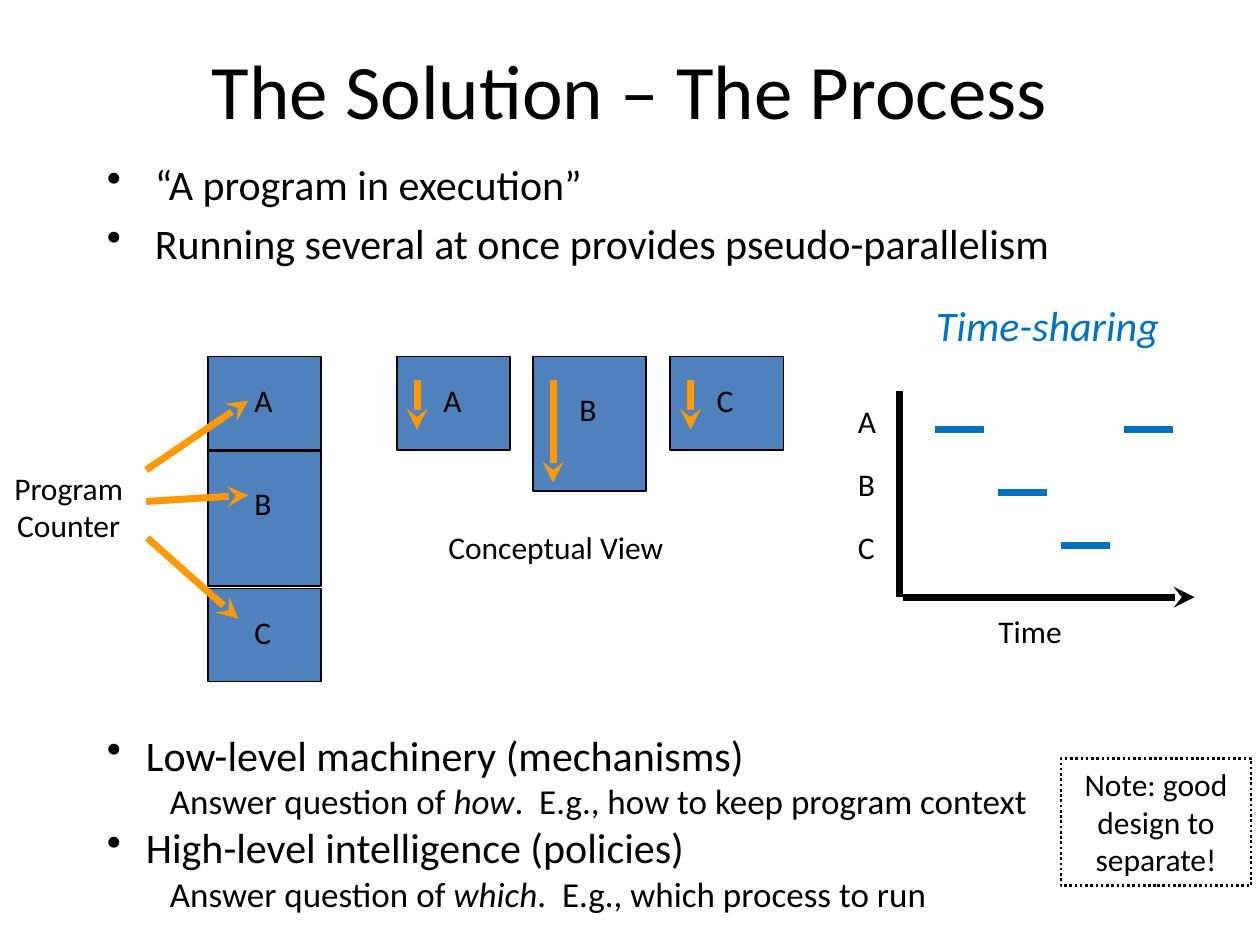
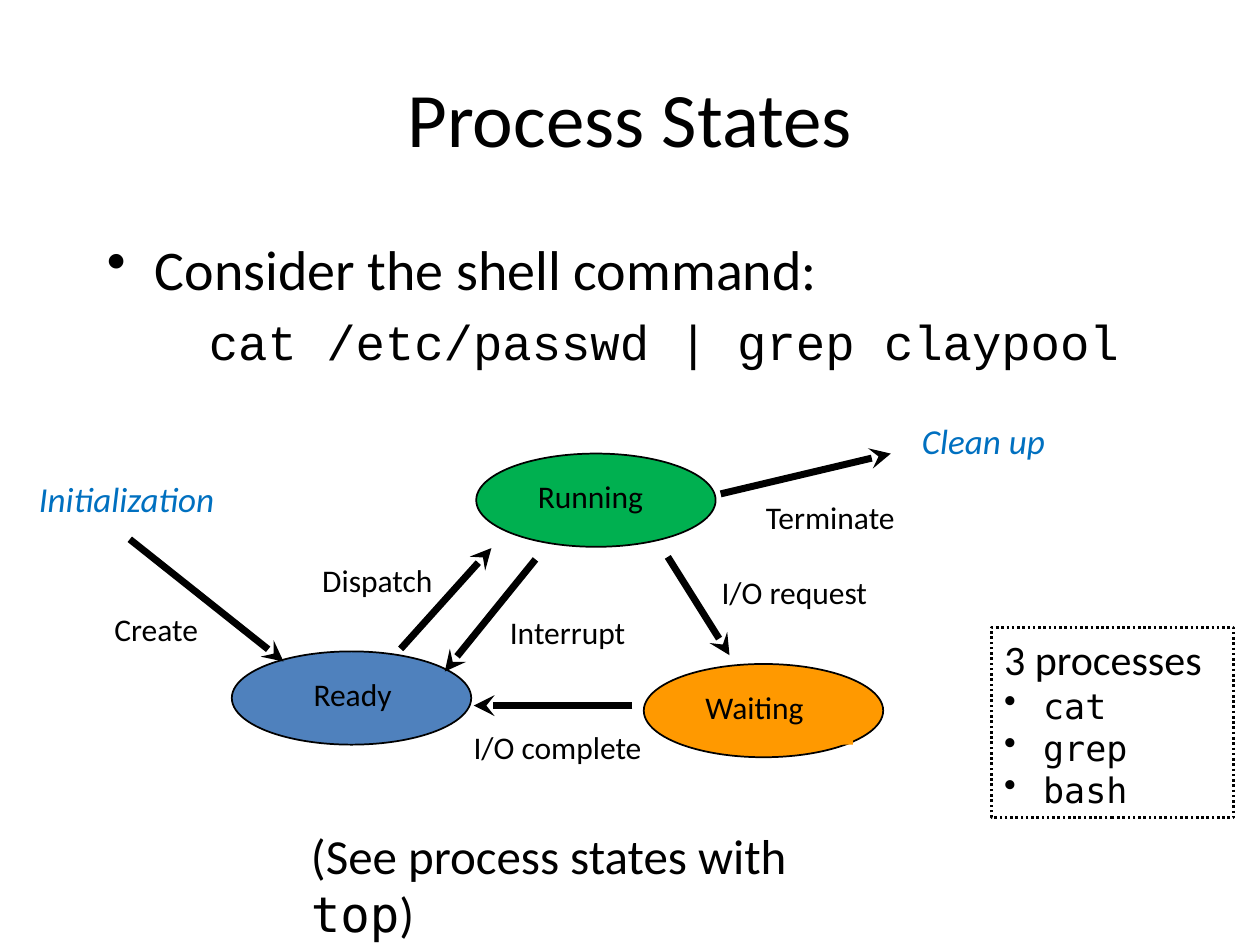
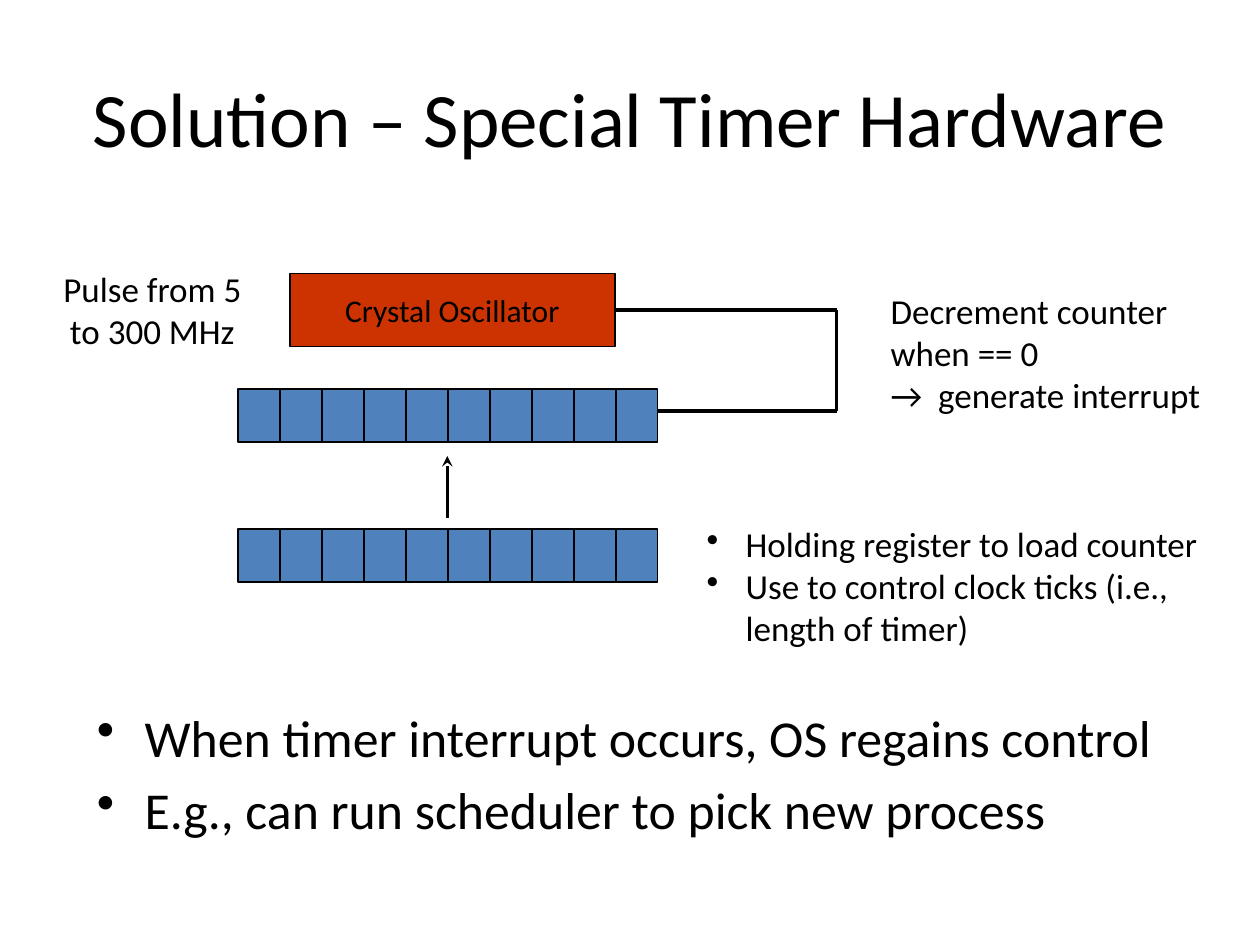
from lxml.etree import SubElement
from pptx import Presentation
from pptx.dml.color import RGBColor
from pptx.enum.dml import MSO_LINE as DASH
from pptx.enum.shapes import MSO_CONNECTOR as LINK, MSO_SHAPE as FORM
from pptx.enum.text import MSO_ANCHOR as ANCHOR, PP_ALIGN as ALIGN
from pptx.oxml.ns import qn
from pptx.util import Inches, Pt

color = RGBColor.from_string
BLACK, BLUE, ACCENT = "000000", "4F81BD", "0070C0"
ORANGE, GREEN, RED = "FF9900", "00B050", "CC3300"
BODY_FONT, SHELL_FONT, CODE_FONT = "Calibri", "Courier New", "DejaVu Sans Mono"

deck = Presentation()
deck.slide_width, deck.slide_height = Inches(10), Inches(7.5)
grid = deck.slide_width / 10


def block(slide, at, lines=(), form=None, fill=None, edge=0, dash=None,
          anchor=ANCHOR.TOP, **style):
    place = [round(length * grid) for length in at]
    if form is None:
        item = slide.shapes.add_textbox(*place)
    else:
        item = slide.shapes.add_shape(form, *place)
        item.shadow.inherit = False
    if fill:
        item.fill.solid()
        item.fill.fore_color.rgb = color(fill)
    else:
        item.fill.background()
    if edge:
        item.line.color.rgb = color(BLACK)
        item.line.width = Pt(edge)
        item.line.dash_style = dash
    else:
        item.line.fill.background()
    frame = item.text_frame
    frame.word_wrap, frame.vertical_anchor = True, anchor
    for number, line in enumerate(lines):
        runs, own = (line, {}) if isinstance(line, str) else line
        look = {"size": 18, "name": BODY_FONT, "ink": BLACK, "align": ALIGN.LEFT,
                "italic": False, "before": 0, "left": 0, "hang": 0} | style | own
        paragraph = frame.add_paragraph() if number else frame.paragraphs[0]
        layout = {"alignment": look["align"],
                  "space_before": Pt(look["before"] * look["size"])}
        for key, value in layout.items():
            setattr(paragraph, key, value)
        properties = paragraph._p.get_or_add_pPr()
        properties.set("marL", str(Inches(look["left"] + look["hang"])))
        properties.set("indent", str(-Inches(look["hang"])))
        if look["hang"]:
            SubElement(properties, qn("a:buChar")).set("char", "•")
        for words, change in [(runs, {})] if isinstance(runs, str) else runs:
            face = look | change
            run = paragraph.add_run()
            run.text = words
            values = {"size": Pt(face["size"]), "name": face["name"],
                      "italic": face["italic"]}
            for key, value in values.items():
                setattr(run.font, key, value)
            run.font.color.rgb = color(face["ink"])


def stroke(slide, start, end, ink=BLACK, width=4, arrow=True):
    ends = [round(length * grid) for length in (*start, *end)]
    link = slide.shapes.add_connector(LINK.STRAIGHT, *ends)
    link.line.color.rgb = color(ink)
    link.line.width = Pt(width)
    if arrow:
        SubElement(link.line._get_or_add_ln(), qn("a:tailEnd")).set("type", "stealth")
    SubElement(link._element.spPr, qn("a:effectLst"))


process, states, timer = pages = [
    deck.slides.add_slide(deck.slide_layouts[6]) for _ in range(3)]
headings = [("The Solution – The Process", 0.08), ("Process States", 0.3),
            ("Solution – Special Timer Hardware", 0.3)]
for page, (heading, top) in zip(pages, headings):
    block(page, (0.5, top, 9, 1.25), [heading], size=44, align=ALIGN.CENTER,
          anchor=ANCHOR.MIDDLE)

outline = {"hang": 0.38, "before": 0.2}
small_bullet = {"hang": 0.31}
centred = {"align": ALIGN.CENTER}
aside = {"ink": ACCENT, "italic": True}
note = {"form": FORM.RECTANGLE, "edge": 1.5, "dash": DASH.ROUND_DOT}

block(process, (0.75, 1.21, 8.75, 1.22),
      ["“A program in execution”",
       "Running several at once provides pseudo-parallelism"], size=24, **outline)

SHORT, TALL = 0.74, 1.07
memory = [("A", 1.65, 2.83, SHORT), ("B", 1.65, 3.58, TALL), ("C", 1.65, 4.67, SHORT)]
concept = [("A", 3.15, 2.83, SHORT), ("B", 4.23, 2.83, TALL), ("C", 5.32, 2.83, SHORT)]
for name, left, top, height in memory + concept:
    block(process, (left, top, 0.9, height), form=FORM.RECTANGLE, fill=BLUE, edge=1)
    block(process, (left + 0.27, top + height / 5, 0.44, 0.5), [name])

counter_arrows = [((1.16, 3.73), (1.97, 3.18)), ((1.16, 3.98), (1.97, 3.93)),
                  ((1.17, 4.27), (1.89, 4.91))]
for start, end in counter_arrows:
    stroke(process, start, end, ORANGE)
for name, left, top, height in concept:
    stroke(process, (left + 0.16, top + 0.19),
           (left + 0.16, top + (1 if height == TALL else 0.58)), ORANGE)
block(process, (0, 3.67, 1.09, 0.71), ["Program", "Counter"], **centred)
block(process, (3.46, 4.14, 2.52, 0.5), ["Conceptual View"])

stroke(process, (7.14, 3.1), (7.14, 4.74), arrow=False)
stroke(process, (7.17, 4.74), (9.48, 4.74))
for row, name in enumerate("ABC"):
    block(process, (6.71, 3.14 + row / 2, 0.44, 0.5), [name])
for turn, level in enumerate([3.41, 3.91, 4.33, 3.41]):
    start = 7.42 + turn / 2
    stroke(process, (start, level), (start + 0.39, level), ACCENT, arrow=False)
block(process, (7.79, 4.81, 0.77, 0.4), ["Time"], **centred)
block(process, (7.33, 2.33, 1.99, 0.5), ["Time-sharing"], size=24, **aside)

answer = {"size": 20, "left": 0.5}
slanted = {"italic": True}
block(process, (0.75, 5.74, 8.49, 1.58), [
    ("Low-level machinery (mechanisms)", small_bullet),
    ([("Answer question of ", {}), ("how", slanted),
      (".  E.g., how to keep program context", {})], answer),
    ("High-level intelligence (policies)", small_bullet),
    ([("Answer question of ", {}), ("which", slanted),
      (".  E.g., which process to run", {})], answer)], size=24)
block(process, (8.42, 6.02, 1.51, 1.01), ["Note: good design to separate!"],
      **note, **centred)

block(states, (0.75, 1.81, 8.5, 1.35), [
    ("Consider the shell command:", outline),
    ("cat /etc/passwd | grep claypool",
     {"size": 28, "name": SHELL_FONT, "left": 0.81, "before": 0.2})], size=32)

ovals = [("Waiting", 5.11, 5.27, ORANGE, 0.39, 1.27, ORANGE),
         ("Ready", 1.84, 5.17, BLUE, 0.55, 1.05, None),
         ("Running", 3.78, 3.6, GREEN, 0.39, 1.35, None)]
for name, left, top, fill, shift, width, backing in ovals:
    block(states, (left, top, 1.9, 0.74), form=FORM.OVAL, fill=fill, edge=1)
    block(states, (left + shift, top + 0.14, width, 0.5), [name], fill=backing)

transitions = [
    ("Create", (0.8, 4.79, 0.88), (1.03, 4.28), (2.25, 5.25)),
    ("Dispatch", (2.45, 4.4, 1.09), (3.18, 5.15), (3.9, 4.35)),
    ("Interrupt", (3.94, 4.82, 1.13), (4.25, 4.44), (3.53, 5.33)),
    ("I/O request", (5.62, 4.5, 1.37), (5.3, 4.42), (5.79, 5.2)),
    ("I/O complete", (3.65, 5.73, 1.55), (5.02, 5.6), (3.76, 5.6)),
    ("Terminate", (5.97, 3.9, 1.24), (5.72, 3.92), (7.07, 3.6))]
for name, at, start, end in transitions:
    stroke(states, start, end)
    block(states, (*at, 0.4), [name], **centred)
for name, at in [("Clean up", (7.21, 3.28, 1.19, 0.44)),
                 ("Initialization", (0.2, 3.74, 1.61, 0.44))]:
    block(states, at, [name], size=20, **aside, **centred)

block(states, (2.37, 6.5, 4.87, 0.57),
      [([("(See process states with ", {}), ("top", {"name": CODE_FONT}),
         (")", {})], {})], size=28)
command = {"size": 20, "name": CODE_FONT} | small_bullet
block(states, (7.87, 4.98, 1.92, 1.51),
      [("3 processes", {"size": 24})]
      + [(name, command) for name in ("cat", "grep", "bash")], **note)

block(timer, (0.67, 5.55, 9, 1.42),
      ["When timer interrupt occurs, OS regains control",
       "E.g., can run scheduler to pick new process"], size=29.6, **outline)

REGISTER_LEFT, REGISTER_WIDTH, REGISTER_HEIGHT, BITS = 1.89, 3.33, 0.42, 10
for top in (3.09, 4.2):
    block(timer, (REGISTER_LEFT, top, REGISTER_WIDTH, REGISTER_HEIGHT),
          form=FORM.RECTANGLE, fill=BLUE, edge=1)
    for bit in range(1, BITS):
        across = REGISTER_LEFT + bit * REGISTER_WIDTH / BITS
        stroke(timer, (across, top), (across, top + REGISTER_HEIGHT),
               width=1, arrow=False)

block(timer, (2.3, 2.17, 2.58, 0.58), ["Crystal Oscillator"], form=FORM.RECTANGLE,
      fill=RED, edge=1, anchor=ANCHOR.MIDDLE, **centred)
wires = [((4.89, 2.46), (6.64, 2.46)), ((5.22, 3.26), (6.64, 3.26)),
         ((6.64, 2.46), (6.64, 3.26))]
for start, end in wires:
    stroke(timer, start, end, width=2, arrow=False)
stroke(timer, (3.55, 4.11), (3.55, 3.62), width=2)

block(timer, (0.36, 2.07, 1.7, 0.77), ["Pulse from 5 to 300 MHz"], size=20, **centred)
block(timer, (6.97, 2.25, 2.83, 1.11),
      ["Decrement counter", "when == 0", "→  generate interrupt"], size=20)
block(timer, (5.51, 4.1, 4.17, 1.11),
      ["Holding register to load counter",
       "Use to control clock ticks (i.e., length of timer)"], size=20, **small_bullet)

deck.save("out.pptx")
